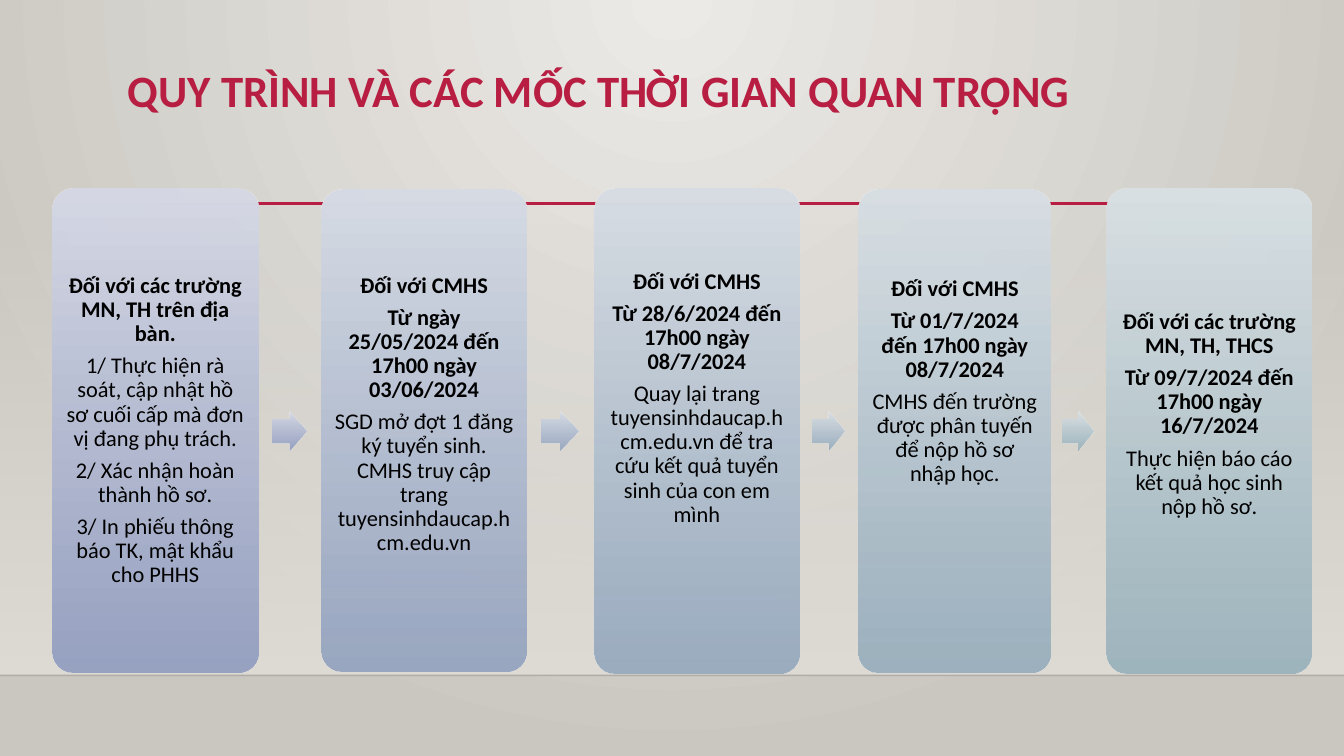
"""Builds the slide on the admission process and its key dates."""
from lxml import etree
from pptx import Presentation
from pptx import util as u
from pptx.dml.color import RGBColor
from pptx.enum import shapes, text
from pptx.oxml.ns import qn

Pt = u.Pt
SLIDE_WIDTH, SLIDE_HEIGHT = 960, 540
FLOOR = 482.4
CARD_MIDDLE = 307.8
CRIMSON = "B71E42"
BLANK_STEP = 23.2
CARDS = [
    {"left": 37.5, "width": 146.9, "height": 345.6, "lift": 0,
     "colours": ("D6D9E5", "929DC0"), "arrow": ("D6D9E5", "929DC0"),
     "headings": ["Đối với các trường MN, TH trên địa bàn."],
     "body": ["1/ Thực hiện rà soát, cập nhật hồ sơ cuối cấp mà đơn vị đang phụ trách.",
              "2/ Xác nhận hoàn thành hồ sơ.",
              "3/ In phiếu thông báo TK, mật khẩu cho PHHS"]},
    {"left": 229.5, "width": 146.9, "height": 344.2, "lift": 1,
     "colours": ("D6DBE5", "94A3BF"), "arrow": ("D7DCE5", "95A5BF"),
     "headings": ["Đối với CMHS", "Từ ngày 25/05/2024 đến 17h00 ngày 03/06/2024"],
     "body": ["SGD mở đợt 1 đăng ký tuyển sinh. CMHS truy cập trang "
              "tuyensinhdaucap.hcm.edu.vn"]},
    {"left": 424.6, "width": 146.5, "height": 346.3, "lift": 2,
     "colours": ("D7DDE4", "96A9BE"), "arrow": ("D8DEE4", "97ACBD"),
     "headings": ["Đối với CMHS", "Từ 28/6/2024 đến 17h00 ngày 08/7/2024"],
     "body": ["Quay lại trang tuyensinhdaucap.hcm.edu.vn để tra cứu kết quả "
              "tuyển sinh của con em mình"]},
    {"left": 613.5, "width": 137, "height": 344.9, "lift": 3,
     "colours": ("D8DFE4", "98AEBD"), "arrow": ("D9E1E4", "9AB2BC"),
     "headings": ["Đối với CMHS", "Từ 01/7/2024 đến 17h00 ngày 08/7/2024"],
     "body": ["CMHS đến trường được phân tuyến để nộp hồ sơ nhập học."]},
    {"left": 790.6, "width": 146.5, "height": 346.3, "lift": 1,
     "colours": ("D9E1E4", "9AB2BC"), "arrow": None,
     "headings": ["Đối với các trường MN, TH, THCS",
                  "Từ 09/7/2024 đến 17h00 ngày 16/7/2024"],
     "body": ["Thực hiện báo cáo kết quả học sinh nộp hồ sơ."]},
]


def colour(value):
    """Return the colour for a hex string."""
    return RGBColor.from_string(value)


def apply(target, values):
    """Set each named format value on the target."""
    for name, value in values.items():
        setattr(target, name, value)


def set_opacity(element, percents):
    """Give the colours inside an element their opacity, in order."""
    for node, percent in zip(element.iter(qn("a:srgbClr")), percents):
        if percent < 100:
            etree.SubElement(node, qn("a:alpha")).set("val", str(percent * 1000))


def set_gradient(fill, colours):
    """Fill with two colours running from top to bottom."""
    fill.gradient()
    fill.gradient_angle = 270
    for stop, value, position in zip(fill.gradient_stops, colours, (0, 1)):
        stop.color.rgb = colour(value)
        stop.position = position


def add_background(slide):
    """Paint the background with a glow from the top centre."""
    set_gradient(slide.background.fill, ("ECEAE7", "CAC7C1"))
    gradient = next(slide.element.iter(qn("a:gradFill")))
    gradient.remove(gradient.find(qn("a:lin")))
    glow = etree.SubElement(gradient, qn("a:path"))
    glow.set("path", "circle")
    focus = etree.SubElement(glow, qn("a:fillToRect"))
    for side, percent in zip("ltrb", (43, 0, 43, 100)):
        focus.set(side, str(percent * 1000))


def add_block(slide, kind, box, colours, opacity, adjustments=()):
    """Add a borderless shape with a vertical gradient."""
    shape = slide.shapes.add_shape(kind, *map(Pt, box))
    shape.shadow.inherit = False
    shape.line.fill.background()
    for index, value in enumerate(adjustments):
        shape.adjustments[index] = value
    set_gradient(shape.fill, colours)
    set_opacity(shape.element.spPr, opacity)
    return shape


def add_rule(slide, left, right, height, value, width, opacity=100):
    """Add a horizontal line."""
    line = slide.shapes.add_connector(
        shapes.MSO_CONNECTOR.STRAIGHT, *map(Pt, (left, height, right, height)))
    line.line.color.rgb = colour(value)
    line.line.width = Pt(width)
    properties = line._element.spPr
    set_opacity(properties, [opacity])
    etree.SubElement(properties, qn("a:effectLst"))


def write(paragraph, words, size, value, bold, **layout):
    """Write one paragraph in the slide font."""
    apply(paragraph, {"line_spacing": 0.9, **layout})
    run = paragraph.add_run()
    run.text = words
    apply(run.font, {"name": "Calibri", "size": Pt(size), "bold": bold})
    run.font.color.rgb = colour(value)


def add_title(slide, words):
    """Add the slide title."""
    frame = slide.shapes.add_textbox(*map(Pt, (84.2, 45.4, 828, 60.5))).text_frame
    apply(frame, {"word_wrap": True, "vertical_anchor": text.MSO_ANCHOR.TOP})
    write(frame.paragraphs[0], words, 32, CRIMSON, True)


def add_card(slide, card):
    """Add one step card with bold headings and plain body text."""
    box = (card["left"], CARD_MIDDLE - card["height"] / 2, card["width"], card["height"])
    shape = add_block(slide, shapes.MSO_SHAPE.ROUNDED_RECTANGLE, box,
                      card["colours"], (100, 92), [0.1])
    frame = shape.text_frame
    apply(frame, {"word_wrap": True, "vertical_anchor": text.MSO_ANCHOR.MIDDLE,
                  "margin_left": Pt(5), "margin_right": Pt(5), "margin_top": Pt(5),
                  "margin_bottom": Pt(5 + card["lift"] * BLANK_STEP)})
    lines = card["headings"] + card["body"]
    for index, words in enumerate(lines):
        paragraph = frame.add_paragraph() if index else frame.paragraphs[0]
        write(paragraph, words, 16, "000000", index < len(card["headings"]),
              alignment=text.PP_ALIGN.CENTER, space_after=Pt(5.6))


def add_arrow(slide, card, following):
    """Add the arrow in the gap between two cards."""
    right = card["left"] + card["width"]
    gap = following["left"] - right
    box = (right + 0.22 * gap, CARD_MIDDLE - 14, 0.54 * gap, 28)
    add_block(slide, shapes.MSO_SHAPE.RIGHT_ARROW, box, card["arrow"],
              (100, 92), (0.6, 0.5))


def main():
    """Build and save the slide."""
    presentation = Presentation()
    apply(presentation, {"slide_width": Pt(SLIDE_WIDTH), "slide_height": Pt(SLIDE_HEIGHT)})
    slide = presentation.slides.add_slide(presentation.slide_layouts[6])
    add_background(slide)
    add_block(slide, shapes.MSO_SHAPE.RECTANGLE, (0, 159, SLIDE_WIDTH, FLOOR - 159),
              ("DFDBD5", "DFDBD5"), (0, 100))
    add_rule(slide, 0, SLIDE_WIDTH, FLOOR, "000001", 1, 20)
    add_rule(slide, 114.5, 871.2, 145.4, CRIMSON, 2.5)
    add_title(slide, "QUY TRÌNH VÀ CÁC MỐC THỜI GIAN QUAN TRỌNG")
    for card in CARDS:
        add_card(slide, card)
    for card, following in zip(CARDS, CARDS[1:]):
        add_arrow(slide, card, following)
    presentation.save("out.pptx")


if __name__ == "__main__":
    main()
